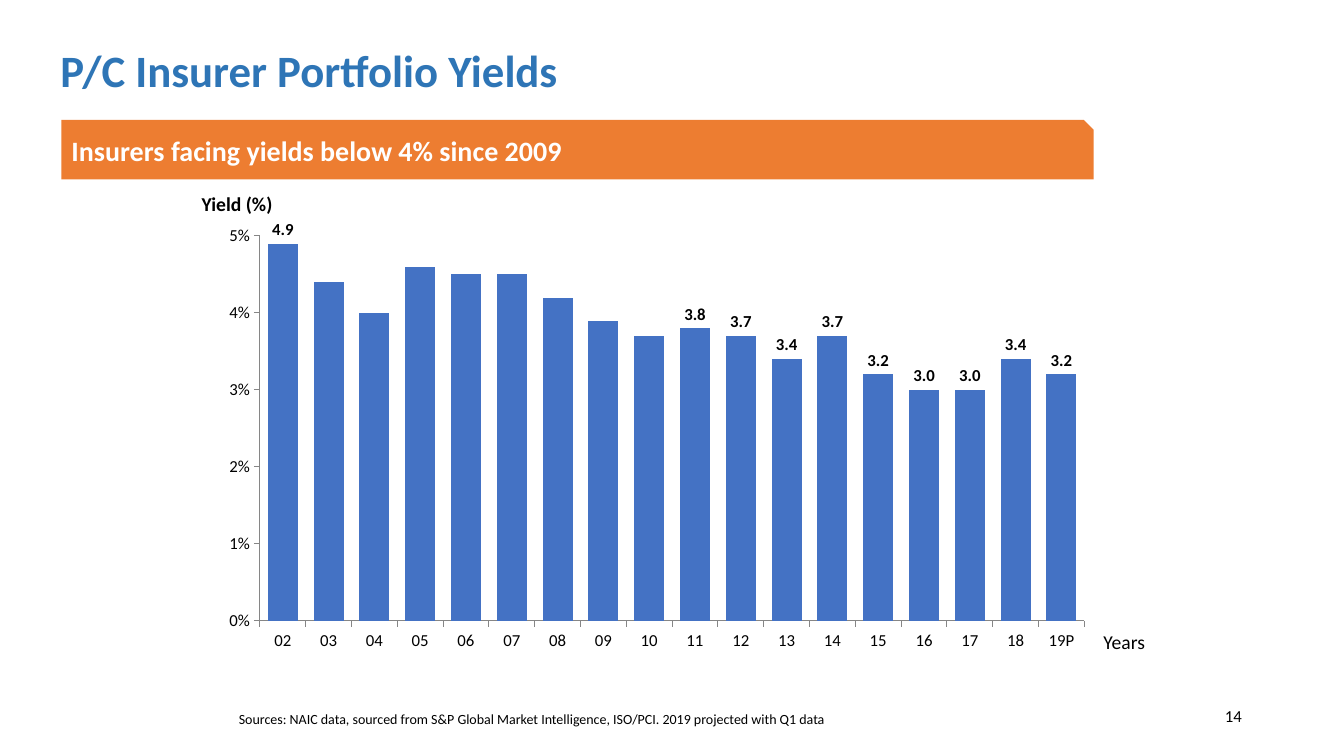
"""Slide with a column chart of property and casualty insurer portfolio yields."""
from dataclasses import dataclass

from lxml import etree
from pptx import Presentation
from pptx import util as u
from pptx.chart.data import CategoryChartData
from pptx.dml.color import RGBColor
from pptx.enum import chart as ch, shapes, text
from pptx.oxml import parse_xml
from pptx.oxml.ns import nsdecls

Cm, Pt = u.Cm, u.Pt


@dataclass(frozen=True)
class Theme:
    """Colours, font and type sizes of the slide."""
    font: str = "Calibri"
    title: str = "2E75B6"
    banner: str = "ED7D31"
    bar: str = "4472C4"
    axis: str = "868686"
    ink: str = "000000"
    paper: str = "FFFFFF"
    title_size: int = 32
    banner_size: int = 20
    label_size: int = 14
    small_size: int = 12
    source_size: int = 10


THEME = Theme()
YEARS = [f"{y:02}" for y in range(2, 19)] + ["19P"]
YIELDS = [4.9, 4.4, 4.0, 4.6, 4.5, 4.5, 4.2, 3.9, 3.7,
          3.8, 3.7, 3.4, 3.7, 3.2, 3.0, 3.0, 3.4, 3.2]
UNLABELLED = range(1, 9)
PLOT = {"x": 0.094, "y": 0.069, "w": 0.896, "h": 0.746}


def style_font(font, size, color=THEME.ink, bold=False):
    """Apply the theme font with a size, colour and weight."""
    font.name, font.size, font.bold = THEME.font, Pt(size), bold
    font.color.rgb = RGBColor.from_string(color)


def write(sp, words, size, color=THEME.ink, bold=False, anchor="MIDDLE",
          align="LEFT", spacing=0.9, pad=0.13):
    """Put one styled paragraph into a shape."""
    tf = sp.text_frame
    tf.text = words
    tf.word_wrap = True
    tf.vertical_anchor = text.MSO_ANCHOR[anchor]
    tf.margin_top = tf.margin_bottom = Cm(pad)
    p = tf.paragraphs[0]
    p.alignment = text.PP_ALIGN[align]
    p.line_spacing = spacing
    style_font(p.runs[0].font, size, color, bold)


def add_text(s, box, words, size, **style):
    """Add a text box in the given box of centimetres."""
    write(s.shapes.add_textbox(*map(Cm, box)), words, size, **style)


def add_header(s, box):
    """Add the title and the banner below it."""
    left, top, width, height = box
    add_text(s, (left, top, width, height), "P/C Insurer Portfolio Yields",
             THEME.title_size, color=THEME.title, bold=True, anchor="TOP", pad=0.25)
    sp = s.shapes.add_shape(shapes.MSO_SHAPE.SNIP_1_RECTANGLE, Cm(left + 0.28),
                            Cm(top + 2.03), Cm(26.01), Cm(1.5))
    sp.shadow.inherit = False
    sp.fill.solid()
    sp.fill.fore_color.rgb = RGBColor.from_string(THEME.banner)
    sp.line.fill.background()
    write(sp, "Insurers facing yields below 4% since 2009",
          THEME.banner_size, color=THEME.paper, bold=True)


def style_axis(axis):
    """Give an axis its line, ticks and label font."""
    axis.has_major_gridlines = False
    axis.major_tick_mark = ch.XL_TICK_MARK.OUTSIDE
    axis.minor_tick_mark = ch.XL_TICK_MARK.NONE
    axis.format.line.color.rgb = RGBColor.from_string(THEME.axis)
    axis.format.line.width = Pt(0.75)
    style_font(axis.tick_labels.font, THEME.small_size)


def place_plot(chart):
    """Fix the inner plot area as fractions of the chart."""
    area = chart.plots[0]._element.getparent()
    for old in area.xpath("c:layout"):
        area.remove(old)
    modes = "".join(f'<c:{k}Mode val="edge"/>' for k in "xy")
    sizes = "".join(f'<c:{k} val="{v}"/>' for k, v in PLOT.items())
    area.insert(0, parse_xml(
        f'<c:layout {nsdecls("c")}><c:manualLayout><c:layoutTarget val="inner"/>'
        f"{modes}{sizes}</c:manualLayout></c:layout>"))


def label_bars(series):
    """Show values above the bars, apart from the unlabelled years."""
    labels = series.data_labels
    labels.show_value = True
    labels.number_format, labels.number_format_is_linked = "0.0", False
    labels.position = ch.XL_LABEL_POSITION.OUTSIDE_END
    style_font(labels.font, THEME.small_size, bold=True)
    for spot, idx in enumerate(UNLABELLED):
        labels._element.insert(spot, parse_xml(
            f'<c:dLbl {nsdecls("c")}><c:idx val="{idx}"/><c:delete val="1"/></c:dLbl>'))


def add_yield_chart(s, box):
    """Add the column chart with its two axis captions."""
    left, top, width, height = box
    data = CategoryChartData(number_format="0.0")
    data.categories = YEARS
    data.add_series("Yield (%)", YIELDS)
    chart = s.shapes.add_chart(ch.XL_CHART_TYPE.COLUMN_CLUSTERED,
                               *map(Cm, box), data).chart
    chart.has_legend = chart.has_title = False
    style_font(chart.font, THEME.small_size)
    plot = chart.plots[0]
    plot.gap_width, plot.vary_by_categories = 52, False
    series = plot.series[0]
    series.format.fill.solid()
    series.format.fill.fore_color.rgb = RGBColor.from_string(THEME.bar)
    label_bars(series)
    for axis in (chart.category_axis, chart.value_axis):
        style_axis(axis)
    axis = chart.value_axis
    axis.minimum_scale, axis.maximum_scale, axis.major_unit = 0, 5, 1
    axis.tick_labels.number_format = '0"%"'
    axis.tick_labels.number_format_is_linked = False
    place_plot(chart)
    add_text(s, (left + 0.46, top - 0.27, 2.92, 0.79), "Yield (%)",
             THEME.label_size, bold=True)
    add_text(s, (left + width, top + 10.77, 2.92, 0.79), "Years", THEME.label_size)


def add_footer(s, box):
    """Add the source line and the page number."""
    left, top, width, height = box
    add_text(s, (left, top, 23.5, height),
             "Sources: NAIC data, sourced from S&P Global Market Intelligence, "
             "ISO/PCI. 2019 projected with Q1 data",
             THEME.source_size, anchor="BOTTOM", pad=0)
    add_text(s, (left + width - 7.62, top + 0.45, 7.62, 1.02), "14",
             THEME.small_size, anchor="TOP", align="RIGHT", spacing=1.0)


def main():
    """Build the slide and save it."""
    prs = Presentation()
    prs.slide_width, prs.slide_height = Cm(33.87), Cm(19.05)
    s = prs.slides.add_slide(prs.slide_layouts[6])
    add_header(s, (1.27, 0.99, 31.32, 3.0))
    add_yield_chart(s, (4.37, 5.05, 23.19, 13.0))
    add_footer(s, (5.77, 17.2, 25.78, 1.14))
    prs.save("out.pptx")


if __name__ == "__main__":
    main()
